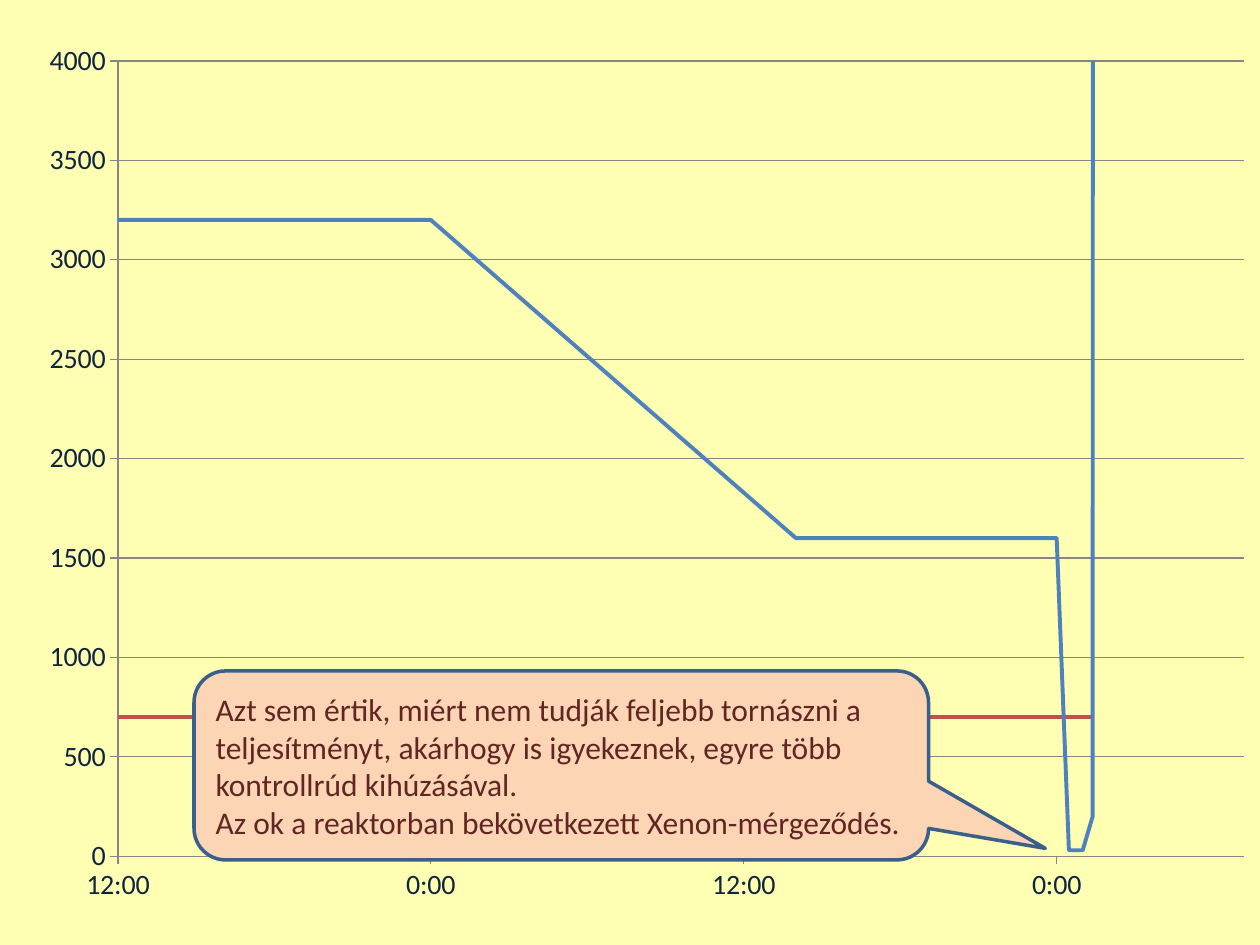
from lxml.etree import fromstring
from pptx import Presentation
from pptx.chart.data import XyChartData
from pptx.dml.color import RGBColor
from pptx.enum.chart import XL_CHART_TYPE as ChartType, XL_TICK_LABEL_POSITION as LabelPosition
from pptx.enum.chart import XL_TICK_MARK as TickMark
from pptx.enum.shapes import MSO_SHAPE as Shape
from pptx.enum.text import MSO_ANCHOR as Anchor, PP_ALIGN as Align
from pptx.oxml.ns import nsdecls
from pptx.util import Inches, Pt

COLORS = {
    "page": "FFFFB3", "grid": "868686", "axis_text": "0F243E",
    "power": "4F81BD", "limit": "C0504D",
    "callout": "FCD5B5", "callout_line": "3A5F8C", "callout_text": "632523",
}
FONT = "Calibri"
NOON = 31526.5  # date serial of the first noon
HOURS = [0, 12, 26, 35.17, 36, 36.47, 37, 37.38, 37.39]
POWER = [3200, 3200, 1600, 1600, 1600, 30, 30, 200, 5000]
LIMIT = 700
PLOT_SHARES = {"x": 0.0745, "y": 0.0385, "w": 0.905, "h": 0.888}
MESSAGE = [
    "Azt sem értik, miért nem tudják feljebb tornászni a teljesítményt, "
    "akárhogy is igyekeznek, egyre több kontrollrúd kihúzásával.",
    "Az ok a reaktorban bekövetkezett Xenon-mérgeződés.",
]


def color(name):
    return RGBColor.from_string(COLORS[name])


def share_box(deck, left, top, width, height):
    """Turn shares of the slide's size into a box."""
    wide, high = deck.slide_width, deck.slide_height
    return int(left * wide), int(top * high), int(width * wide), int(height * high)


def set_font(font, size, color_name):
    font.name, font.size = FONT, Pt(size)
    font.color.rgb = color(color_name)


def set_line(line, color_name, width):
    line.color.rgb = color(color_name)
    line.width = Pt(width)


def style_axis(axis, low, high, step):
    axis.minimum_scale, axis.maximum_scale, axis.major_unit = low, high, step
    axis.major_tick_mark, axis.minor_tick_mark = TickMark.OUTSIDE, TickMark.NONE
    axis.tick_label_position = LabelPosition.LOW
    set_line(axis.format.line, "grid", 0.75)
    set_font(axis.tick_labels.font, 16, "axis_text")


def fix_plot_area(chart):
    """Pin the inner plot area to its shares of the chart."""
    area = chart._chartSpace.chart.plotArea
    for old in area.xpath("c:layout"):
        area.remove(old)
    shares = "".join(f'<c:{key} val="{value}"/>' for key, value in PLOT_SHARES.items())
    area.insert(0, fromstring(
        f'<c:layout {nsdecls("c")}><c:manualLayout><c:layoutTarget val="inner"/>'
        f'<c:xMode val="edge"/><c:yMode val="edge"/>{shares}</c:manualLayout></c:layout>'))


def add_power_chart(page, box):
    data = XyChartData()
    lines = {"Series 1": POWER, "Series 2": [LIMIT] * len(HOURS)}
    for name, values in lines.items():
        series = data.add_series(name)
        for hour, value in zip(HOURS, values):
            series.add_data_point(NOON + hour / 24, value)
    chart = page.shapes.add_chart(ChartType.XY_SCATTER_LINES_NO_MARKERS, *box, data).chart
    chart.has_legend = chart.has_title = False
    set_font(chart.font, 10, "axis_text")
    chart.plots[0].vary_by_categories = False
    for series, name in zip(chart.plots[0].series, ("power", "limit")):
        series.smooth = False
        set_line(series.format.line, name, 2.25)

    time, power = chart.category_axis, chart.value_axis
    style_axis(time, NOON, NOON + 1.8, 0.5)
    style_axis(power, 0, 4000, 500)
    time.has_major_gridlines, power.has_major_gridlines = False, True
    set_line(power.major_gridlines.format.line, "grid", 0.75)
    for axis, number_format in ((time, "h:mm;@"), (power, "General")):
        axis.tick_labels.number_format = number_format
        axis.tick_labels.number_format_is_linked = False
    fix_plot_area(chart)


def add_callout(page, box):
    callout = page.shapes.add_shape(Shape.ROUNDED_RECTANGULAR_CALLOUT, *box)
    for index, value in enumerate((0.659, 0.439, 0.167)):
        callout.adjustments[index] = value
    callout.shadow.inherit = False
    callout.fill.solid()
    callout.fill.fore_color.rgb = color("callout")
    set_line(callout.line, "callout_line", 2)
    frame = callout.text_frame
    frame.word_wrap, frame.vertical_anchor = True, Anchor.MIDDLE
    frame.text = "\n".join(MESSAGE)
    for para in frame.paragraphs:
        para.alignment = Align.LEFT
        for span in para.runs:
            set_font(span.font, 18, "callout_text")


def main():
    deck = Presentation()
    deck.slide_width, deck.slide_height = Inches(10), Inches(7.5)
    page = deck.slides.add_slide(deck.slide_layouts[6])
    page.background.fill.solid()
    page.background.fill.fore_color.rgb = color("page")
    add_power_chart(page, share_box(deck, 0.02, 0.028, 0.988, 0.948))
    add_callout(page, share_box(deck, 0.154, 0.71, 0.583, 0.2))
    deck.save("out.pptx")


if __name__ == "__main__":
    main()
